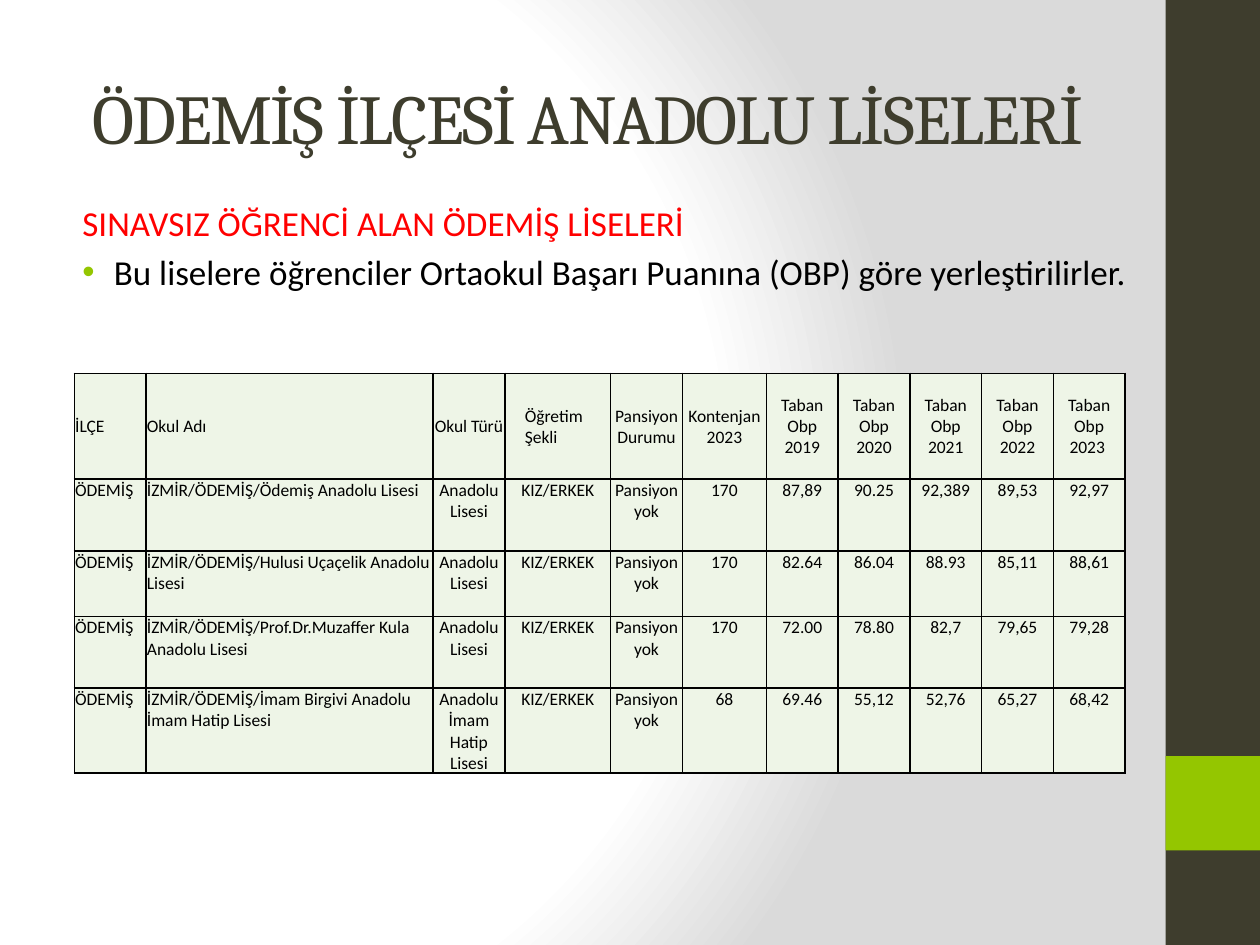
from dataclasses import dataclass

from lxml.etree import SubElement
from pptx import Presentation
from pptx.dml.color import RGBColor
from pptx.enum.shapes import MSO_SHAPE
from pptx.enum.text import MSO_ANCHOR, MSO_AUTO_SIZE, PP_ALIGN
from pptx.oxml import parse_xml
from pptx.oxml.ns import nsdecls, qn
from pptx.util import Pt


@dataclass(frozen=True)
class Theme:
    heading_font: str = "Cambria"
    body_font: str = "Calibri"
    title_size: float = 40
    body_size: float = 20
    table_size: float = 10
    dark: str = "3E3D2D"
    accent: str = "94C600"
    warning: str = "FF0000"
    ink: str = "000000"
    cell: str = "EEF5E7"
    backdrop: str = "FFFFFF"
    backdrop_edge: str = "DADADA"


class SlideBuilder:
    def __init__(self, slide, theme):
        self.slide = slide
        self.theme = theme

    def add_run(self, paragraph, text, size, color, font=None):
        run = paragraph.add_run()
        run.text = text
        run.font.size = Pt(size)
        run.font.name = font or self.theme.body_font
        run.font.color.rgb = RGBColor.from_string(color)
        return run

    def background(self):
        """Radial gradient that stays light for three quarters of its radius."""
        stops = [(0, self.theme.backdrop), (75, self.theme.backdrop), (100, self.theme.backdrop_edge)]
        stop_xml = "".join(
            f'<a:gs pos="{position * 1000}"><a:srgbClr val="{color}"/></a:gs>' for position, color in stops
        )
        gradient = parse_xml(
            f'<p:bg {nsdecls("p", "a")}><p:bgPr><a:gradFill rotWithShape="1">'
            f'<a:gsLst>{stop_xml}</a:gsLst><a:path path="circle">'
            '<a:fillToRect l="20000" t="50000" r="100000" b="50000"/></a:path>'
            "</a:gradFill><a:effectLst/></p:bgPr></p:bg>"
        )
        self.slide.element.find(qn("p:cSld")).insert(0, gradient)

    def band(self, left, top, width, height, color):
        band = self.slide.shapes.add_shape(MSO_SHAPE.RECTANGLE, Pt(left), Pt(top), Pt(width), Pt(height))
        band.shadow.inherit = False
        band.fill.solid()
        band.fill.fore_color.rgb = RGBColor.from_string(color)
        band.line.fill.background()

    def title(self, text, left, top, width, height):
        title = self.slide.shapes.title
        title.left, title.top, title.width, title.height = Pt(left), Pt(top), Pt(width), Pt(height)
        frame = title.text_frame
        frame.auto_size = MSO_AUTO_SIZE.NONE
        frame.vertical_anchor = MSO_ANCHOR.MIDDLE
        paragraph = frame.paragraphs[0]
        paragraph.alignment = PP_ALIGN.CENTER
        theme = self.theme
        run = self.add_run(paragraph, text, theme.title_size, theme.dark, theme.heading_font)
        run.font._element.set("spc", "-100")

    def body(self, lead, bullet, left, top, width, height):
        theme = self.theme
        frame = self.slide.shapes.add_textbox(Pt(left), Pt(top), Pt(width), Pt(height)).text_frame
        frame.word_wrap = True
        lead_line, bullet_line = frame.paragraphs[0], frame.add_paragraph()
        for paragraph in (lead_line, bullet_line):
            paragraph.space_before = Pt(theme.body_size * 0.2)
        self.add_run(lead_line, lead, theme.body_size, theme.warning)
        self.add_run(bullet_line, bullet, theme.body_size, theme.ink)
        lead_line._p.get_or_add_pPr().set("marL", str(Pt(9)))
        properties = bullet_line._p.get_or_add_pPr()
        properties.set("marL", str(Pt(27)))
        properties.set("indent", str(Pt(-18)))
        bullet_color = SubElement(properties, qn("a:buClr"))
        SubElement(bullet_color, qn("a:srgbClr"), val=theme.accent)
        SubElement(properties, qn("a:buFont"), typeface="Arial")
        SubElement(properties, qn("a:buChar"), char="•")

    def cell_borders(self, cell):
        properties = cell._tc.get_or_add_tcPr()
        for position, side in enumerate(("lnL", "lnR", "lnT", "lnB")):
            border = parse_xml(
                f'<a:{side} {nsdecls("a")} w="{Pt(1)}"><a:solidFill>'
                f'<a:srgbClr val="{self.theme.ink}"/></a:solidFill></a:{side}>'
            )
            properties.insert(position, border)

    def fill_cell(self, cell, text, alignment, anchor, left_margin):
        cell.margin_left = Pt(left_margin)
        cell.margin_top = cell.margin_right = Pt(0.5)
        cell.margin_bottom = 0
        cell.vertical_anchor = anchor
        cell.fill.solid()
        cell.fill.fore_color.rgb = RGBColor.from_string(self.theme.cell)
        self.cell_borders(cell)
        paragraph = cell.text_frame.paragraphs[0]
        paragraph.alignment = alignment
        for number, line in enumerate(text.split("\n")):
            if number:
                paragraph.add_line_break()
            self.add_run(paragraph, line, self.theme.table_size, self.theme.ink)

    def table(self, rows, left, top, widths, heights):
        table = self.slide.shapes.add_table(
            len(rows), len(widths), Pt(left), Pt(top), Pt(sum(widths)), Pt(sum(heights))
        ).table
        table.first_row = table.horz_banding = False
        for column, width in zip(table.columns, widths):
            column.width = Pt(width)
        for row, height in zip(table.rows, heights):
            row.height = Pt(height)
        for r, texts in enumerate(rows):
            for c, text in enumerate(texts):
                indented = r == 0 and c == 3
                self.fill_cell(
                    table.cell(r, c),
                    text,
                    PP_ALIGN.LEFT if c < 2 or indented else PP_ALIGN.CENTER,
                    MSO_ANCHOR.MIDDLE if r == 0 else MSO_ANCHOR.TOP,
                    11.5 if indented else 0.5,
                )


HEADER = [
    "İLÇE", "Okul Adı", "Okul Türü", "Öğretim Şekli", "Pansiyon Durumu", "Kontenjan\n2023",
    *(f"Taban Obp\n{year}" for year in range(2019, 2023)), "Taban Obp\n2023 ",
]
# School, type, quota, then base scores for 2019 to 2023
SCHOOLS = [
    ("Ödemiş Anadolu Lisesi", "Anadolu Lisesi", "170",
     "87,89", "90.25", "92,389", "89,53", "92,97"),
    ("Hulusi Uçaçelik Anadolu Lisesi", "Anadolu Lisesi", "170",
     "82.64", "86.04", "88.93", "85,11", "88,61"),
    ("Prof.Dr.Muzaffer Kula Anadolu Lisesi", "Anadolu Lisesi", "170",
     "72.00", "78.80", "82,7", "79,65", "79,28"),
    ("İmam Birgivi Anadolu İmam Hatip Lisesi", "Anadolu\nİmam Hatip Lisesi", "68",
     "69.46", "55,12", "52,76", "65,27", "68,42"),
]


def main():
    presentation = Presentation()
    presentation.slide_width, presentation.slide_height = Pt(720), Pt(540)
    theme = Theme()
    builder = SlideBuilder(presentation.slides.add_slide(presentation.slide_layouts[5]), theme)

    builder.background()
    builder.band(666, 0, 54, 540, theme.dark)
    builder.band(666, 432, 54, 54, theme.accent)
    builder.title("ÖDEMİŞ İLÇESİ ANADOLU LİSELERİ", 36, 21.6, 600, 90)
    builder.body(
        "SINAVSIZ ÖĞRENCİ ALAN ÖDEMİŞ LİSELERİ",
        "Bu liselere öğrenciler Ortaokul Başarı Puanına (OBP) göre yerleştirilirler.",
        31, 111.6, 623.5, 378,
    )
    school_rows = [
        ["ÖDEMİŞ", f"İZMİR/ÖDEMİŞ/{school}", kind, "KIZ/ERKEK", "Pansiyon yok", quota, *scores]
        for school, kind, quota, *scores in SCHOOLS
    ]
    builder.table(
        [HEADER, *school_rows], 42.5, 213.3,
        widths=[41, 164, 41, 60.5, 41, 48] + [41] * 5,
        heights=[60.5, 41, 37.5, 41, 35],
    )
    presentation.save("out.pptx")


if __name__ == "__main__":
    main()
